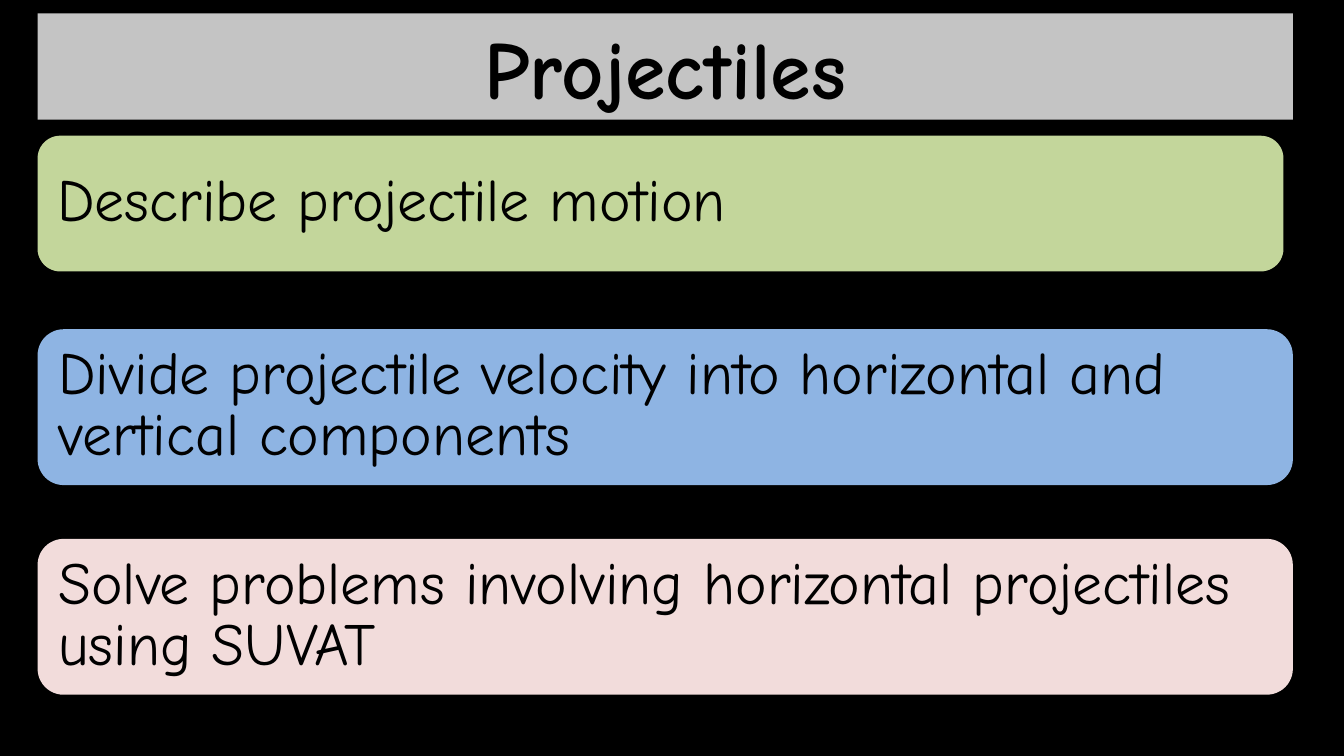
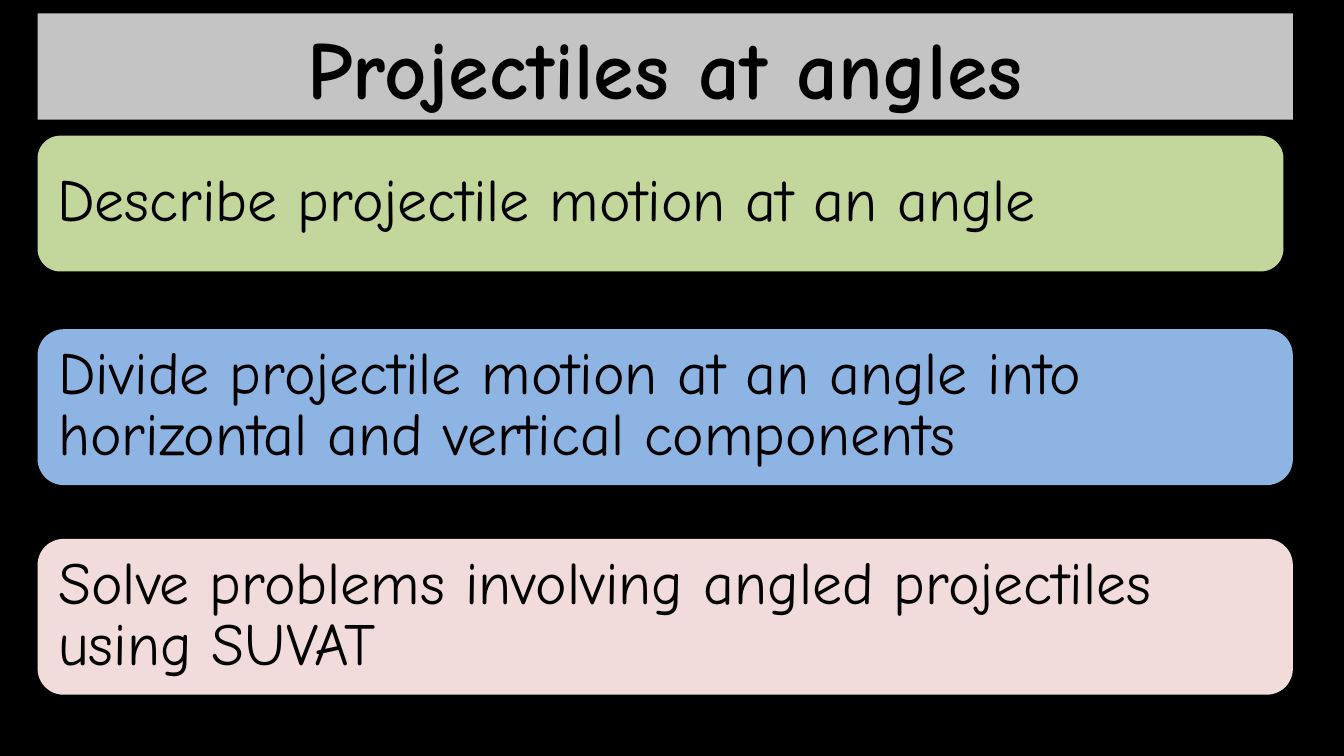
from lxml import etree
from pptx import Presentation
from pptx.dml.color import RGBColor
from pptx.enum.shapes import MSO_SHAPE
from pptx.enum.text import MSO_ANCHOR, MSO_AUTO_SIZE, PP_ALIGN
from pptx.oxml.ns import qn
from pptx.util import Inches, Pt

FONT = "Comic Neue"
COLORS = {
    "background": "000000",
    "text": "000000",
    "title": "FFFFFF",
    "describe": "C3D69B",
    "divide": "8EB4E3",
    "solve": "F2DCDB",
}
LEFT = 0.28
WIDTH = 9.34
TITLE_OPACITY = 77

# Objective boxes: colour, top, width, height
OBJECTIVE_BOXES = [
    ("describe", 1.01, 9.27, 1.01),
    ("divide", 2.45, WIDTH, 1.16),
    ("solve", 4.01, WIDTH, 1.16),
]

LESSONS = [
    ("Projectiles", [
        "Describe projectile motion",
        "Divide projectile velocity into horizontal and vertical components",
        "Solve problems involving horizontal projectiles using SUVAT",
    ]),
    ("Projectiles at angles", [
        "Describe projectile motion at an angle",
        "Divide projectile motion at an angle into horizontal and vertical components",
        "Solve problems involving angled projectiles using SUVAT",
    ]),
]


def set_fill(fill, color):
    fill.solid()
    fill.fore_color.rgb = RGBColor.from_string(COLORS[color])


def set_fill_opacity(shape, percent):
    color_element = shape.element.find(f"{qn('p:spPr')}/{qn('a:solidFill')}/{qn('a:srgbClr')}")
    etree.SubElement(color_element, qn("a:alpha")).set("val", str(percent * 1000))


def write_text(shape, text, size=32, bold=False, align=PP_ALIGN.LEFT,
               line_spacing=1.0, space_after=0):
    frame = shape.text_frame
    frame.word_wrap = True
    frame.auto_size = MSO_AUTO_SIZE.NONE
    frame.vertical_anchor = MSO_ANCHOR.MIDDLE
    frame.margin_left = frame.margin_right = Inches(0.1)
    frame.margin_top = frame.margin_bottom = Inches(0.05)
    paragraph = frame.paragraphs[0]
    paragraph.alignment = align
    paragraph.line_spacing = line_spacing
    paragraph.space_before = Pt(0)
    paragraph.space_after = Pt(space_after)
    run = paragraph.add_run()
    run.text = text
    run.font.name = FONT
    run.font.size = Pt(size)
    run.font.bold = bold
    run.font.color.rgb = RGBColor.from_string(COLORS["text"])


def add_title(slide, text):
    title = slide.shapes.title
    title.left, title.top = Inches(LEFT), Inches(0.1)
    title.width, title.height = Inches(WIDTH), Inches(0.79)
    set_fill(title.fill, "title")
    set_fill_opacity(title, TITLE_OPACITY)
    write_text(title, text, size=44, bold=True, align=PP_ALIGN.CENTER)


def add_objective(slide, text, color, top, width, height):
    box = slide.shapes.add_shape(
        MSO_SHAPE.ROUNDED_RECTANGLE,
        Inches(LEFT), Inches(top), Inches(width), Inches(height))
    box.shadow.inherit = False
    box.line.fill.background()
    set_fill(box.fill, color)
    write_text(box, text, line_spacing=0.85, space_after=6.4)


def add_lesson_slide(presentation, title, objectives):
    slide = presentation.slides.add_slide(presentation.slide_layouts[5])
    set_fill(slide.background.fill, "background")
    add_title(slide, title)
    for text, box in zip(objectives, OBJECTIVE_BOXES):
        add_objective(slide, text, *box)


def main():
    presentation = Presentation()
    # Widescreen 16:9
    presentation.slide_width = Inches(10)
    presentation.slide_height = Inches(10) * 9 // 16
    for title, objectives in LESSONS:
        add_lesson_slide(presentation, title, objectives)
    presentation.save("out.pptx")


if __name__ == "__main__":
    main()
